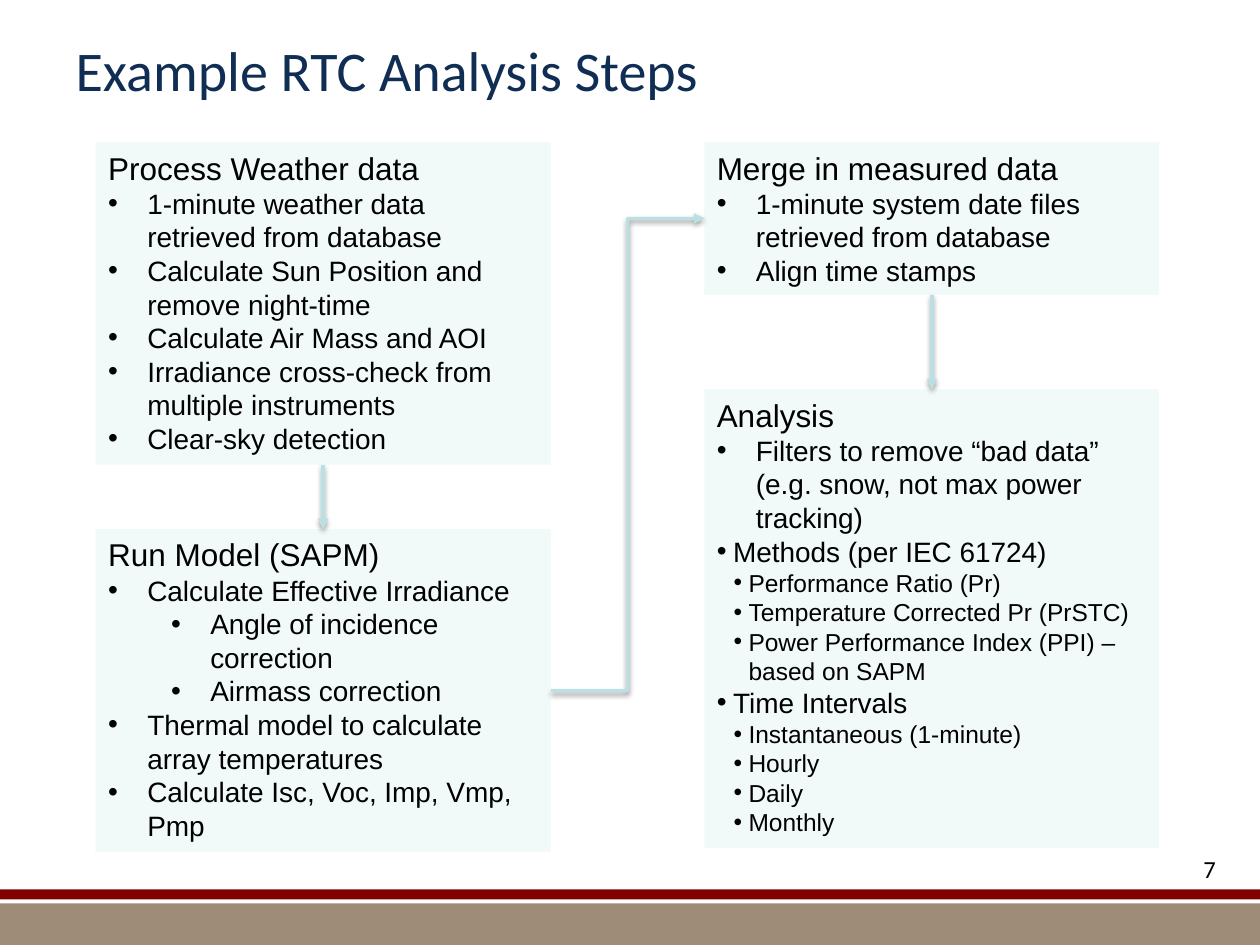
from dataclasses import dataclass

from lxml import etree
from pptx import Presentation
from pptx.dml.color import RGBColor
from pptx.enum.shapes import MSO_CONNECTOR, MSO_SHAPE
from pptx.enum.text import MSO_ANCHOR, MSO_AUTO_SIZE, PP_ALIGN
from pptx.oxml import parse_xml
from pptx.oxml.ns import nsdecls, qn
from pptx.util import Cm, Pt

RECT = MSO_SHAPE.RECTANGLE
STRAIGHT, ELBOW = MSO_CONNECTOR.STRAIGHT, MSO_CONNECTOR.ELBOW
LEFT, RIGHT = PP_ALIGN.LEFT, PP_ALIGN.RIGHT
TOP, MIDDLE = MSO_ANCHOR.TOP, MSO_ANCHOR.MIDDLE
GROW = MSO_AUTO_SIZE.SHAPE_TO_FIT_TEXT
SITES = {"top": 0, "left": 1, "bottom": 2, "right": 3}


@dataclass(frozen=True)
class Theme:
    ink: str = "000000"
    navy: str = "102E54"
    panel: str = "F1F9F9"
    arrow: str = "BBE0E3"
    red: str = "800000"
    tan: str = "9E8C78"
    head: str = "Calibri"
    body: str = "Arial"
    title: int = 32
    lead: int = 18
    text: int = 16
    small: int = 14


THEME = Theme()

# Kind of line: type size, left margin and hang in cm, outline level
KINDS = {
    "lead": (THEME.lead, 0, 0, 0),
    "item": (THEME.text, 0.79, 0.79, 0),
    "sub": (THEME.text, 2.06, 0.79, 1),
    "group": (THEME.text, 0.33, 0.33, 0),
    "detail": (THEME.small, 0.64, 0.3, 1),
}


def write(para, text, size=THEME.text, font=THEME.body, color=THEME.ink,
          align=LEFT, left=0, hang=0, level=0):
    """Fill one paragraph; a hang above zero gives it a bullet."""
    para.alignment = align
    para.level = level
    if hang:
        props = para._p.get_or_add_pPr()
        props.set("marL", str(Cm(left)))
        props.set("indent", str(-Cm(hang)))
        etree.SubElement(props, qn("a:buFont"), typeface=THEME.body)
        etree.SubElement(props, qn("a:buChar"), char="•")
    run = para.add_run()
    run.text = text
    run.font.size = Pt(size)
    run.font.name = font
    run.font.color.rgb = RGBColor.from_string(color)


class Page:
    def __init__(self, slide, theme):
        self.slide, self.theme = slide, theme
        self.shapes = slide.shapes

    def title(self, text, *place):
        box = self.shapes.title
        box.left, box.top, box.width, box.height = map(Cm, place)
        box.text_frame.vertical_anchor = MIDDLE
        write(box.text_frame.paragraphs[0], text, size=self.theme.title,
              font=self.theme.head, color=self.theme.navy)

    def label(self, text, *place):
        frame = self.shapes.add_textbox(*map(Cm, place)).text_frame
        frame.word_wrap = True
        write(frame.paragraphs[0], text, size=self.theme.small,
              font=self.theme.head, align=RIGHT)

    def block(self, color, *place):
        box = self.shapes.add_shape(RECT, *map(Cm, place))
        box.shadow.inherit = False
        box.fill.solid()
        box.fill.fore_color.rgb = RGBColor.from_string(color)
        box.line.fill.background()
        return box

    def panel(self, lines, *place):
        box = self.block(self.theme.panel, *place)
        frame = box.text_frame
        frame.word_wrap = True
        frame.auto_size = GROW
        frame.vertical_anchor = TOP
        for i, (kind, text) in enumerate(lines):
            para = frame.add_paragraph() if i else frame.paragraphs[0]
            size, left, hang, level = KINDS[kind]
            write(para, text, size=size, left=left, hang=hang, level=level)
        return box

    def arrow(self, start, out, end, into, kind=STRAIGHT):
        """Join a side of one panel to a side of another."""
        link = self.shapes.add_connector(kind, 0, 0, 0, 0)
        link.begin_connect(start, SITES[out])
        link.end_connect(end, SITES[into])
        link.line.width = Pt(2)
        link.line.color.rgb = RGBColor.from_string(self.theme.arrow)
        etree.SubElement(link.line._get_or_add_ln(), qn("a:tailEnd"),
                         type="triangle")
        link._element.spPr.append(parse_xml(
            f'<a:effectLst {nsdecls("a")}>'
            f'<a:outerShdw blurRad="{Pt(3.1)}" dist="{Pt(1.6)}" '
            'dir="5400000" rotWithShape="0">'
            f'<a:srgbClr val="{self.theme.ink}"><a:alpha val="38000"/>'
            '</a:srgbClr></a:outerShdw></a:effectLst>'))


WEATHER = [
    ("lead", "Process Weather data"),
    ("item", "1-minute weather data retrieved from database"),
    ("item", "Calculate Sun Position and remove night-time"),
    ("item", "Calculate Air Mass and AOI"),
    ("item", "Irradiance cross-check from multiple instruments"),
    ("item", "Clear-sky detection"),
]
MODEL = [
    ("lead", "Run Model (SAPM)"),
    ("item", "Calculate Effective Irradiance"),
    ("sub", "Angle of incidence correction"),
    ("sub", "Airmass correction"),
    ("item", "Thermal model to calculate array temperatures"),
    ("item", "Calculate Isc, Voc, Imp, Vmp, Pmp"),
]
MERGE = [
    ("lead", "Merge in measured data"),
    ("item", "1-minute system date files retrieved from database"),
    ("item", "Align time stamps"),
]
ANALYSIS = [
    ("lead", "Analysis"),
    ("item", "Filters to remove “bad data” (e.g. snow, not max power tracking)"),
    ("group", "Methods (per IEC 61724)"),
    ("detail", "Performance Ratio (Pr)"),
    ("detail", "Temperature Corrected Pr (PrSTC)"),
    ("detail", "Power Performance Index (PPI) – based on SAPM"),
    ("group", "Time Intervals"),
    ("detail", "Instantaneous (1-minute)"),
    ("detail", "Hourly"),
    ("detail", "Daily"),
    ("detail", "Monthly"),
]


def main():
    deck = Presentation()
    deck.slide_width, deck.slide_height = Cm(25.4), Cm(19.05)
    page = Page(deck.slides.add_slide(deck.slide_layouts[5]), THEME)

    page.block(THEME.tan, 0, 18.21, 25.4, 0.84)
    page.block(THEME.red, 0, 17.93, 25.4, 0.2)
    page.title("Example RTC Analysis Steps", 1.27, 0, 22.86, 2.77)
    page.label("7", 23.06, 17.09, 1.7, 1.04)

    near, far, top, wide = 1.93, 14.2, 2.87, 9.17
    weather = page.panel(WEATHER, near, top, wide, 6.5)
    model = page.panel(MODEL, near, 10.67, wide, 6.5)
    merge = page.panel(MERGE, far, top, wide, 3.07)
    analysis = page.panel(ANALYSIS, far, 7.85, wide, 9.25)

    page.arrow(weather, "bottom", model, "top")
    page.arrow(model, "right", merge, "left", kind=ELBOW)
    page.arrow(merge, "bottom", analysis, "top")
    deck.save("out.pptx")


if __name__ == "__main__":
    main()
